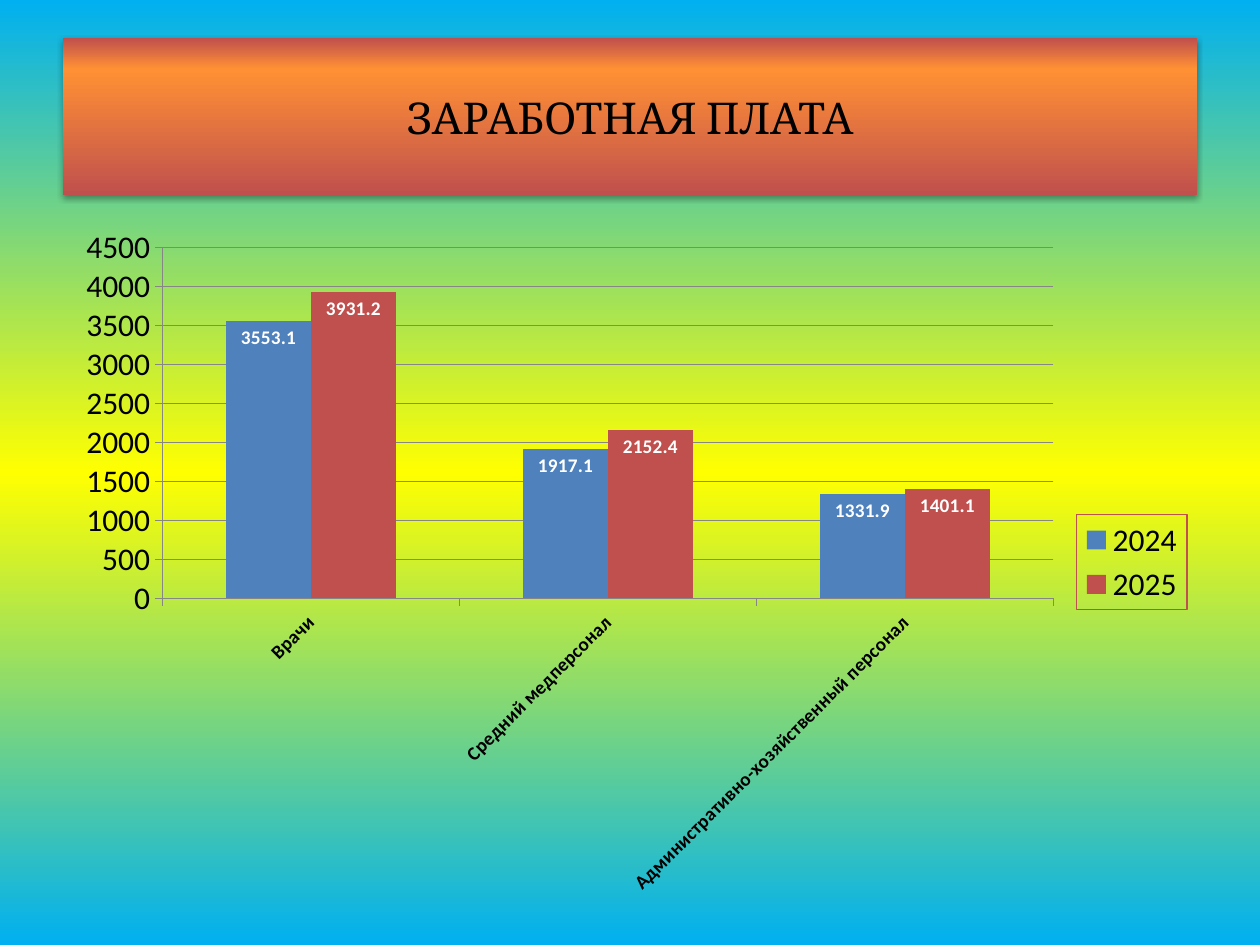
from dataclasses import dataclass
from typing import NamedTuple

from lxml.etree import SubElement
from pptx import Presentation
from pptx.chart.data import CategoryChartData
from pptx.dml.color import RGBColor
from pptx.enum.chart import (XL_CHART_TYPE, XL_LABEL_POSITION, XL_LEGEND_POSITION,
                             XL_TICK_LABEL_POSITION, XL_TICK_MARK)
from pptx.enum.text import MSO_ANCHOR, PP_ALIGN
from pptx.oxml import parse_xml
from pptx.oxml.ns import nsdecls, qn
from pptx.util import Pt


@dataclass(frozen=True)
class Theme:
    sky: str = "00B0F0"
    yellow: str = "FFFF00"
    blue: str = "4F81BD"
    red: str = "C0504D"
    orange: str = "FF9034"
    grid: str = "868686"
    black: str = "000000"
    white: str = "FFFFFF"
    title_font: str = "Cambria"
    chart_font: str = "Calibri"
    title_size: int = 25
    axis_size: int = 18
    label_size: int = 11


class Box(NamedTuple):
    x: float
    y: float
    w: float
    h: float


class Series(NamedTuple):
    name: str
    values: tuple[float, ...]
    color: str


THEME = Theme()
TITLE_BOX = Box(36, 21.6, 648, 90)
CHART_BOX = Box(36, 122.4, 648, 396.7)
PLOT_BOX = Box(56.9, 19, 509.1, 200.6)  # inside the chart
LEGEND_BOX = Box(579.2, 171.7, 63.2, 54.3)  # inside the chart
CATEGORIES = ("Врачи", "Средний медперсонал", "Административно-хозяйственный персонал")
SERIES = (
    Series("2024", (3553.1, 1917.1, 1331.9), THEME.blue),
    Series("2025", (3931.2, 2152.4, 1401.1), THEME.red),
)


def rgb(color: str) -> RGBColor:
    return RGBColor.from_string(color)


def set_font(font, size: int, color: str, name: str, bold: bool = False) -> None:
    font.size, font.name, font.bold = Pt(size), name, bold
    font.color.rgb = rgb(color)


def fill_downward(fill, element, stops: tuple[tuple[int, str], ...]) -> None:
    """Fill with a top-to-bottom gradient; stops are (percent, colour)."""
    fill.gradient()
    fill.gradient_angle = 270
    stop_list = next(element.iter(qn("a:gsLst")))
    for stop in list(stop_list):
        stop_list.remove(stop)
    for percent, color in stops:
        stop = SubElement(stop_list, qn("a:gs"), pos=str(percent * 1000))
        SubElement(stop, qn("a:srgbClr"), val=color)


def manual_layout(box: Box, inner: bool = False):
    """Make a chart layout from a box in points inside the chart."""
    target = '<c:layoutTarget val="inner"/>' if inner else ""
    modes = '<c:xMode val="edge"/><c:yMode val="edge"/>'
    spans = (CHART_BOX.w, CHART_BOX.h) * 2
    sizes = "".join(f'<c:{key} val="{length / span}"/>'
                    for key, length, span in zip(Box._fields, box, spans))
    return parse_xml(f'<c:layout {nsdecls("c")}><c:manualLayout>{target}{modes}{sizes}'
                     "</c:manualLayout></c:layout>")


def remove_layout(element) -> None:
    for old in element.findall(qn("c:layout")):
        element.remove(old)


def add_title(slide, text: str) -> None:
    sp = slide.shapes.title
    sp.left, sp.top, sp.width, sp.height = map(Pt, TITLE_BOX)
    props = sp._element.spPr
    props.append(parse_xml(f'<a:prstGeom {nsdecls("a")} prst="roundRect"><a:avLst/></a:prstGeom>'))
    fill_downward(sp.fill, props, ((0, THEME.red), (20, THEME.orange), (100, THEME.red)))
    props.append(parse_xml(
        f'<a:effectLst {nsdecls("a")}><a:outerShdw blurRad="{Pt(3.1)}" dist="{Pt(1.8)}" '
        f'dir="5400000" rotWithShape="0"><a:srgbClr val="{THEME.black}">'
        '<a:alpha val="35000"/></a:srgbClr></a:outerShdw></a:effectLst>'))
    tf = sp.text_frame
    tf.vertical_anchor = MSO_ANCHOR.MIDDLE
    p = tf.paragraphs[0]
    p.alignment = PP_ALIGN.CENTER
    r = p.add_run()
    r.text = text
    set_font(r.font, THEME.title_size, THEME.black, THEME.title_font)


def style_axes(chart) -> None:
    values, cats = chart.value_axis, chart.category_axis
    values.minimum_scale, values.maximum_scale, values.major_unit = 0, 4500, 500
    values.has_major_gridlines = True
    set_font(values.tick_labels.font, THEME.axis_size, THEME.black, THEME.chart_font)
    set_font(cats.tick_labels.font, THEME.label_size, THEME.black, THEME.chart_font, True)
    cats.tick_label_position = XL_TICK_LABEL_POSITION.LOW
    cats._element.find(qn("c:txPr")).find(qn("a:bodyPr")).set("rot", "-2700000")
    for axis in (values, cats):
        axis.major_tick_mark = XL_TICK_MARK.OUTSIDE
        axis.minor_tick_mark = XL_TICK_MARK.NONE
    for line in (values.format.line, cats.format.line, values.major_gridlines.format.line):
        line.color.rgb = rgb(THEME.grid)
        line.width = Pt(0.75)


def style_legend(chart) -> None:
    chart.has_legend = True
    legend = chart.legend
    legend.position = XL_LEGEND_POSITION.RIGHT
    legend.include_in_layout = False
    set_font(legend.font, THEME.axis_size, THEME.black, THEME.chart_font)
    element = legend._element
    remove_layout(element)
    element.find(qn("c:legendPos")).addnext(manual_layout(LEGEND_BOX))
    element.find(qn("c:overlay")).addnext(parse_xml(
        f'<c:spPr {nsdecls("c", "a")}><a:ln w="{Pt(0.75)}"><a:solidFill>'
        f'<a:srgbClr val="{THEME.red}"/></a:solidFill></a:ln></c:spPr>'))


def add_salary_chart(slide) -> None:
    data = CategoryChartData()
    data.categories = CATEGORIES
    for item in SERIES:
        data.add_series(item.name, item.values)
    frame = slide.shapes.add_chart(XL_CHART_TYPE.COLUMN_CLUSTERED, *map(Pt, CHART_BOX), data)
    chart = frame.chart
    chart.has_title = False
    set_font(chart.font, THEME.axis_size, THEME.black, THEME.chart_font)
    plot = chart.plots[0]
    plot.gap_width, plot.overlap, plot.vary_by_categories = 150, 0, False
    for series, item in zip(plot.series, SERIES):
        series.format.fill.solid()
        series.format.fill.fore_color.rgb = rgb(item.color)
        labels = series.data_labels
        labels.show_value = True
        labels.position = XL_LABEL_POSITION.INSIDE_END
        set_font(labels.font, THEME.label_size, THEME.white, THEME.chart_font, True)
    style_axes(chart)
    style_legend(chart)
    area = next(chart._chartSpace.iter(qn("c:plotArea")))
    remove_layout(area)
    area.insert(0, manual_layout(PLOT_BOX, inner=True))


def main() -> None:
    prs = Presentation()
    prs.slide_width, prs.slide_height = Pt(720), Pt(540)
    slide = prs.slides.add_slide(prs.slide_layouts[5])
    fill_downward(slide.background.fill, slide._element,
                  ((0, THEME.sky), (50, THEME.yellow), (100, THEME.sky)))
    add_title(slide, "ЗАРАБОТНАЯ ПЛАТА")
    add_salary_chart(slide)
    prs.save("out.pptx")


if __name__ == "__main__":
    main()
